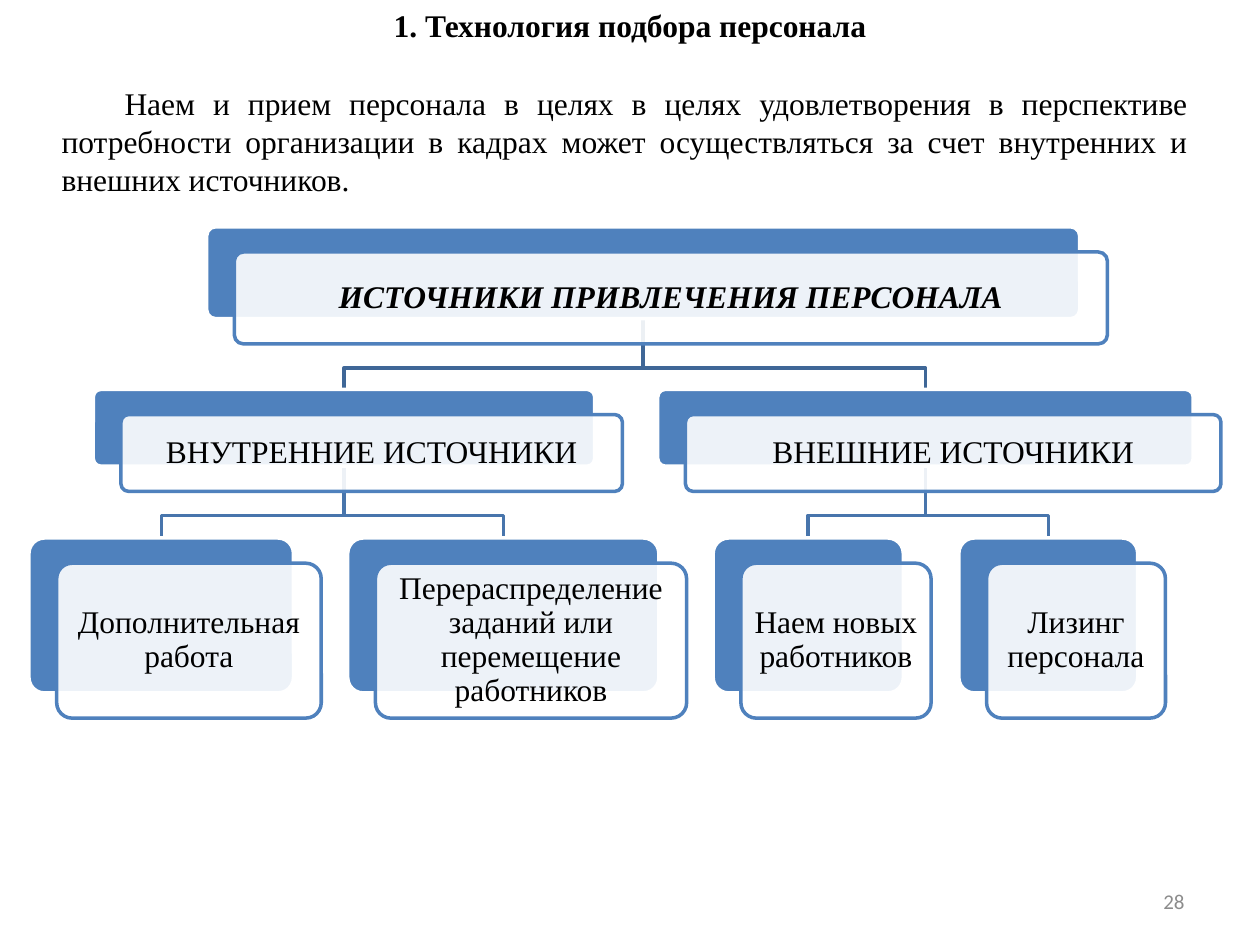
from lxml.etree import SubElement
from pptx import Presentation
from pptx.dml.color import RGBColor
from pptx.enum.shapes import MSO_SHAPE as Shape
from pptx.enum.text import MSO_ANCHOR as Anchor, MSO_AUTO_SIZE as AutoSize, PP_ALIGN as Align
from pptx.oxml.ns import qn
from pptx.util import Inches, Pt

BLACK = RGBColor(0x00, 0x00, 0x00)
WHITE = RGBColor(0xFF, 0xFF, 0xFF)
BLUE = RGBColor(0x4F, 0x81, 0xBD)
UPPER_LINK = RGBColor(0x3F, 0x67, 0x97)
LOWER_LINK = RGBColor(0x48, 0x75, 0xAC)
GRAY = RGBColor(0x8C, 0x8C, 0x8C)

ROOT_TOP, BRANCH_TOP, LEAF_TOP = 1.8, 3.09, 4.27
ROOT_HEIGHT, BRANCH_HEIGHT, LEAF_HEIGHT = 0.73, 0.61, 1.23
OFFSET_X, OFFSET_Y = 0.22, 0.2
BEND = 0.39

ROOT = ("ИСТОЧНИКИ ПРИВЛЕЧЕНИЯ ПЕРСОНАЛА", 1.64, 6.93)
BRANCHES = [
    (("ВНУТРЕННИЕ ИСТОЧНИКИ", 0.74, 3.98), [
        ("Дополнительная работа", 0.23, 2.1),
        ("Перераспределение заданий или перемещение работников", 2.76, 2.47),
    ]),
    (("ВНЕШНИЕ ИСТОЧНИКИ", 5.22, 4.25), [
        ("Наем новых работников", 5.66, 1.51),
        ("Лизинг персонала", 7.61, 1.42),
    ]),
]


class SlideBuilder:
    font = "Times New Roman"
    size = 18

    def __init__(self, page):
        self.page = page

    def fill_text(self, frame, text, align, anchor=Anchor.TOP, font=None, size=None,
                  color=BLACK, bold=False, italic=False):
        frame.word_wrap = True
        frame.auto_size = AutoSize.NONE
        frame.vertical_anchor = anchor
        para = frame.paragraphs[0]
        para.alignment = align
        span = para.add_run()
        span.text = text
        span.font.name = font or self.font
        span.font.size = Pt(size or self.size)
        span.font.color.rgb = color
        span.font.bold = bold
        span.font.italic = italic
        return para

    def title(self, text, left, top, width, height):
        box = self.page.shapes.title
        box.left, box.top = Inches(left), Inches(top)
        box.width, box.height = Inches(width), Inches(height)
        self.fill_text(box.text_frame, text, Align.CENTER, bold=True)

    def text(self, text, left, top, width, height, align, indent=0, **style):
        box = self.page.shapes.add_textbox(
            Inches(left), Inches(top), Inches(width), Inches(height))
        para = self.fill_text(box.text_frame, text, align, **style)
        if indent:
            para._p.get_or_add_pPr().set("indent", str(Inches(indent)))

    def card(self, left, top, width, height, fill, line):
        box = self.page.shapes.add_shape(
            Shape.ROUNDED_RECTANGLE, Inches(left), Inches(top), Inches(width), Inches(height))
        box.adjustments[0] = 0.1
        box.shadow.inherit = False
        box.fill.solid()
        box.fill.fore_color.rgb = fill
        box.line.color.rgb = line
        box.line.width = Pt(2)
        return box

    def node(self, item, top, height, **style):
        text, left, width = item
        self.card(left, top, width, height, BLUE, WHITE)
        front = self.card(left + OFFSET_X, top + OFFSET_Y, width, height, WHITE, BLUE)
        color = front._element.spPr.find(qn("a:solidFill"))[0]
        SubElement(color, qn("a:alpha")).set("val", "90000")
        frame = front.text_frame
        frame.margin_left = frame.margin_right = Inches(0.07)
        frame.margin_top = frame.margin_bottom = Inches(0.07)
        para = self.fill_text(frame, text, Align.CENTER, Anchor.MIDDLE, **style)
        para.line_spacing = 0.9

    def link(self, parent, child, start, end, color):
        parent_x, child_x = (left + width / 2 for _, left, width in (parent, child))
        bend = Inches(start + BEND)
        builder = self.page.shapes.build_freeform(Inches(parent_x), Inches(start))
        builder.add_line_segments(
            [(Inches(parent_x), bend), (Inches(child_x), bend), (Inches(child_x), Inches(end))],
            close=False)
        elbow = builder.convert_to_shape()
        elbow.shadow.inherit = False
        elbow.fill.background()
        elbow.line.color.rgb = color
        elbow.line.width = Pt(2)


def main():
    deck = Presentation()
    deck.slide_width, deck.slide_height = Inches(10), Inches(7.5)
    slide = SlideBuilder(deck.slides.add_slide(deck.slide_layouts[5]))

    slide.title("1. Технология подбора персонала", 0, 0, 10, 0.4)
    slide.text(
        "Наем и прием персонала в целях в целях удовлетворения в перспективе потребности "
        "организации в кадрах может осуществляться за счет внутренних и внешних источников.",
        0.39, 0.62, 9.14, 1.01, Align.JUSTIFY, indent=0.5)

    for branch, leaves in BRANCHES:
        for leaf in leaves:
            slide.link(branch, leaf, BRANCH_TOP + BRANCH_HEIGHT, LEAF_TOP, LOWER_LINK)
        slide.link(ROOT, branch, ROOT_TOP + ROOT_HEIGHT, BRANCH_TOP, UPPER_LINK)

    slide.node(ROOT, ROOT_TOP, ROOT_HEIGHT, bold=True, italic=True)
    for branch, leaves in BRANCHES:
        slide.node(branch, BRANCH_TOP, BRANCH_HEIGHT)
        for leaf in leaves:
            slide.node(leaf, LEAF_TOP, LEAF_HEIGHT)

    slide.text("28", 7.17, 6.95, 2.33, 0.4, Align.RIGHT, anchor=Anchor.MIDDLE,
               font="Calibri", size=12, color=GRAY)
    deck.save("out.pptx")


if __name__ == "__main__":
    main()
